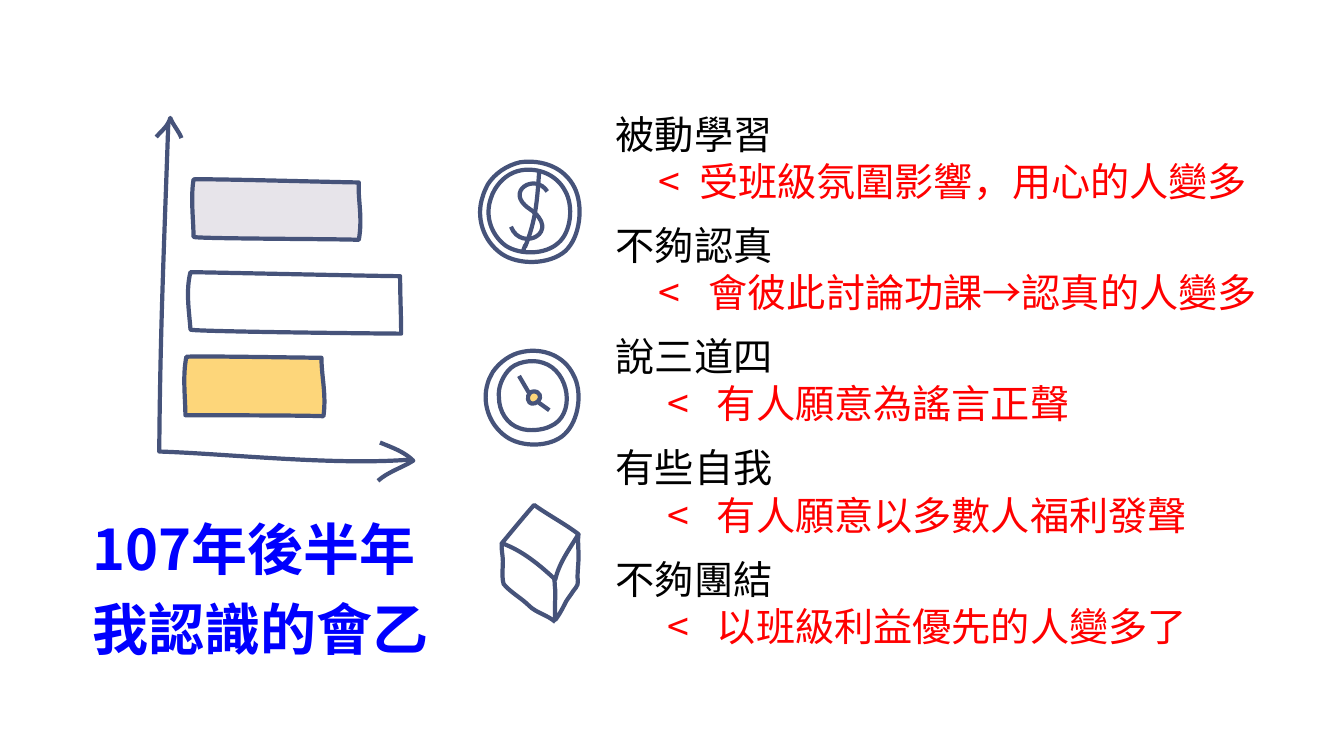
"""Build a slide with hand-drawn icons beside a list of class observations."""
from dataclasses import dataclass

from pptx import Presentation
from pptx.dml.color import RGBColor
from pptx.enum.text import MSO_ANCHOR, MSO_AUTO_SIZE, PP_ALIGN
from pptx.oxml import parse_xml
from pptx.oxml.ns import nsdecls, qn
from pptx.oxml.xmlchemy import OxmlElement
from pptx.util import Cm, Pt

MIDDLE = MSO_ANCHOR.MIDDLE
NO_AUTOFIT = MSO_AUTO_SIZE.NONE
LEFT = PP_ALIGN.LEFT
INK = RGBColor(0x46, 0x53, 0x7A)
YELLOW = RGBColor(0xFD, 0xD6, 0x7A)
LILAC = RGBColor(0xE7, 0xE4, 0xEA)
BLUE = RGBColor(0x00, 0x00, 0xFF)
BLACK = RGBColor(0x00, 0x00, 0x00)
RED = RGBColor(0xFF, 0x00, 0x00)
FONT = "Noto Sans CJK SC"
GRID = Cm(0.0254)


@dataclass(frozen=True)
class Stroke:
    """A Bezier outline: start point, then three points per curve, in grid units."""
    coords: tuple
    closed: bool = False
    fill: RGBColor | None = None


@dataclass(frozen=True)
class Observation:
    """A weakness and the improvement that answers it."""
    weakness: str
    change: str
    mark_at: float = 1.3
    text_at: float = 2.55


BARS = (
    Stroke((319, 355, 302, 355, 196, 353, 185, 354, 181, 373, 184, 395, 184, 412,
            184, 412, 308, 412, 321, 413, 324, 391, 319, 374, 319, 355), True, YELLOW),
    Stroke((397, 274, 379, 274, 199, 270, 189, 270, 184, 289, 188, 311, 189, 327,
            189, 329, 386, 331, 398, 331, 398, 313, 397, 293, 397, 274), True),
    Stroke((356, 181, 342, 181, 200, 177, 192, 178, 189, 197, 192, 219, 192, 235,
            192, 237, 347, 237, 356, 238, 360, 215, 355, 199, 356, 181), True, LILAC),
)
AXES = (
    Stroke((407, 456, 331, 462, 223, 450, 158, 448, 159, 324, 163, 240, 167, 122)),
    Stroke((375, 477, 385, 468, 399, 464, 410, 457, 401, 448, 389, 444, 377, 439)),
    Stroke((180, 137, 178, 131, 171, 123, 169, 117, 167, 125, 160, 130, 155, 136)),
)
CLOCK = (
    Stroke((484, 380, 478, 399, 485, 421, 502, 433, 517, 444, 546, 444, 560, 431,
            575, 417, 578, 388, 569, 372, 560, 353, 539, 345, 519, 349,
            507, 351, 496, 359, 489, 369, 487, 373, 485, 376, 484, 380), True),
    Stroke((495, 394, 495, 408, 503, 421, 516, 425, 524, 428, 538, 427, 546, 423,
            572, 412, 565, 368, 539, 360, 528, 356, 511, 359, 504, 368,
            498, 375, 494, 385, 495, 394), True),
    Stroke((531, 400, 536, 398, 538, 392, 533, 389, 529, 387, 525, 389, 524, 393,
            523, 398, 526, 402, 531, 400), True, YELLOW),
    Stroke((534, 399, 538, 402, 541, 404, 545, 407)),
    Stroke((525, 390, 522, 385, 518, 378, 515, 373)),
)
COIN = (
    Stroke((543, 190, 531, 171, 500, 190, 525, 207, 559, 230, 517, 251, 507, 225)),
    Stroke((535, 170, 533, 198, 532, 218, 521, 245, 523, 238, 518, 251, 519, 250)),
    Stroke((479, 195, 472, 215, 479, 239, 498, 252, 514, 263, 545, 263, 561, 249,
            576, 235, 579, 204, 570, 186, 560, 166, 538, 158, 516, 161,
            503, 164, 491, 172, 484, 183, 482, 187, 480, 191, 479, 195), True),
    Stroke((487, 197, 481, 214, 487, 233, 502, 244, 516, 253, 541, 253, 554, 241,
            567, 230, 569, 204, 561, 190, 553, 174, 535, 166, 517, 169,
            506, 171, 497, 178, 491, 188, 489, 191, 488, 194, 487, 197), True),
)
CUBE = (
    Stroke((498, 539, 518, 546, 536, 561, 551, 575, 555, 558, 565, 545, 574, 530,
            561, 520, 544, 511, 530, 501, 521, 511, 498, 539, 498, 539), True),
    Stroke((574, 529, 573, 537, 574, 544, 574, 552, 574, 559, 573, 566, 573, 573,
            573, 575, 574, 577, 573, 580, 573, 582, 570, 584, 569, 586,
            566, 591, 562, 595, 560, 600, 557, 606, 554, 611, 551, 615,
            550, 606, 551, 596, 551, 586, 550, 581, 551, 576, 549, 572)),
    Stroke((498, 538, 497, 545, 499, 550, 499, 557, 499, 563, 498, 570, 499, 576,
            499, 579, 500, 580, 502, 582, 509, 589, 518, 594, 525, 601,
            532, 608, 543, 610, 551, 617)),
)
OBSERVATIONS = (
    Observation("被動學習", "受班級氛圍影響，用心的人變多", 1.07, 2.1),
    Observation("不夠認真", "會彼此討論功課→認真的人變多", 1.07, 2.34),
    Observation("說三道四", "有人願意為謠言正聲"),
    Observation("有些自我", "有人願意以多數人福利發聲"),
    Observation("不夠團結", "以班級利益優先的人變多了"),
)


def bend(shape) -> None:
    """Turn every three line segments of an outline into one Bezier curve."""
    path = shape._element.find(".//" + qn("a:path"))
    lines = path.findall(qn("a:lnTo"))
    for first in range(0, len(lines), 3):
        curve = OxmlElement("a:cubicBezTo")
        lines[first].addprevious(curve)
        for line in lines[first:first + 3]:
            curve.append(line[0])
            path.remove(line)


def draw_icon(s, strokes: tuple) -> None:
    """Draw the strokes of one icon as a group."""
    group = s.shapes.add_group_shape()
    for stroke in strokes:
        points = list(zip(stroke.coords[::2], stroke.coords[1::2]))
        builder = group.shapes.build_freeform(*points[0], scale=GRID)
        builder.add_line_segments(points[1:], close=stroke.closed)
        sp = builder.convert_to_shape()
        bend(sp)
        sp.shadow.inherit = False
        sp.line.color.rgb = INK
        sp.line.width = Pt(3)
        if stroke.fill is None:
            sp.fill.background()
        else:
            sp.fill.solid()
            sp.fill.fore_color.rgb = stroke.fill


def format_frame(tf) -> None:
    """Give a text frame its wrapping, anchor and insets."""
    values = dict(word_wrap=True, auto_size=NO_AUTOFIT, vertical_anchor=MIDDLE,
                  margin_left=Cm(0.1), margin_right=Cm(0.1),
                  margin_top=Cm(0.1), margin_bottom=Cm(0.1))
    for name, value in values.items():
        setattr(tf, name, value)


def write(p, text: str, size: float, color: RGBColor, bold: bool, spacing: float) -> None:
    """Fill a paragraph with formatted text."""
    p.text = text
    p.alignment = LEFT
    p.line_spacing = Pt(spacing)
    for r in p.runs:
        for name, value in dict(size=Pt(size), bold=bold, name=FONT).items():
            setattr(r.font, name, value)
        r.font.color.rgb = color
        r._r.get_or_add_rPr().append(
            parse_xml(f'<a:ea {nsdecls("a")} typeface="{FONT}"/>'))


def add_title(s) -> None:
    """Place and fill the title."""
    sp = s.shapes.title
    values = dict(left=Cm(2.24), top=Cm(12.5), width=Cm(9.8), height=Cm(4.32))
    for name, value in values.items():
        setattr(sp, name, value)
    format_frame(sp.text_frame)
    write(sp.text_frame.paragraphs[0], "107年後半年\v我認識的會乙", 40, BLUE, True, 57)


def add_observations(s) -> None:
    """List each weakness with its improvement indented below."""
    tf = s.shapes.add_textbox(Cm(15.42), Cm(2.62), Cm(18.01), Cm(13.89)).text_frame
    format_frame(tf)
    for i, item in enumerate(OBSERVATIONS):
        p = tf.add_paragraph() if i else tf.paragraphs[0]
        write(p, item.weakness, 28, BLACK, False, 33.7)
        p.space_before = Pt(12 if i else 0)
        p = tf.add_paragraph()
        write(p, f"<\t{item.change}", 28, RED, False, 33.7)
        pPr = p._p.get_or_add_pPr()
        pPr.set("marL", str(Cm(item.text_at)))
        pPr.set("indent", str(Cm(item.mark_at - item.text_at)))


def main() -> None:
    """Assemble and save the slide."""
    prs = Presentation()
    prs.slide_width, prs.slide_height = Cm(33.87), Cm(19.05)
    s = prs.slides.add_slide(prs.slide_layouts[5])
    add_title(s)
    for strokes in (BARS, AXES, CLOCK, COIN, CUBE):
        draw_icon(s, strokes)
    add_observations(s)
    prs.save("out.pptx")


if __name__ == "__main__":
    main()
